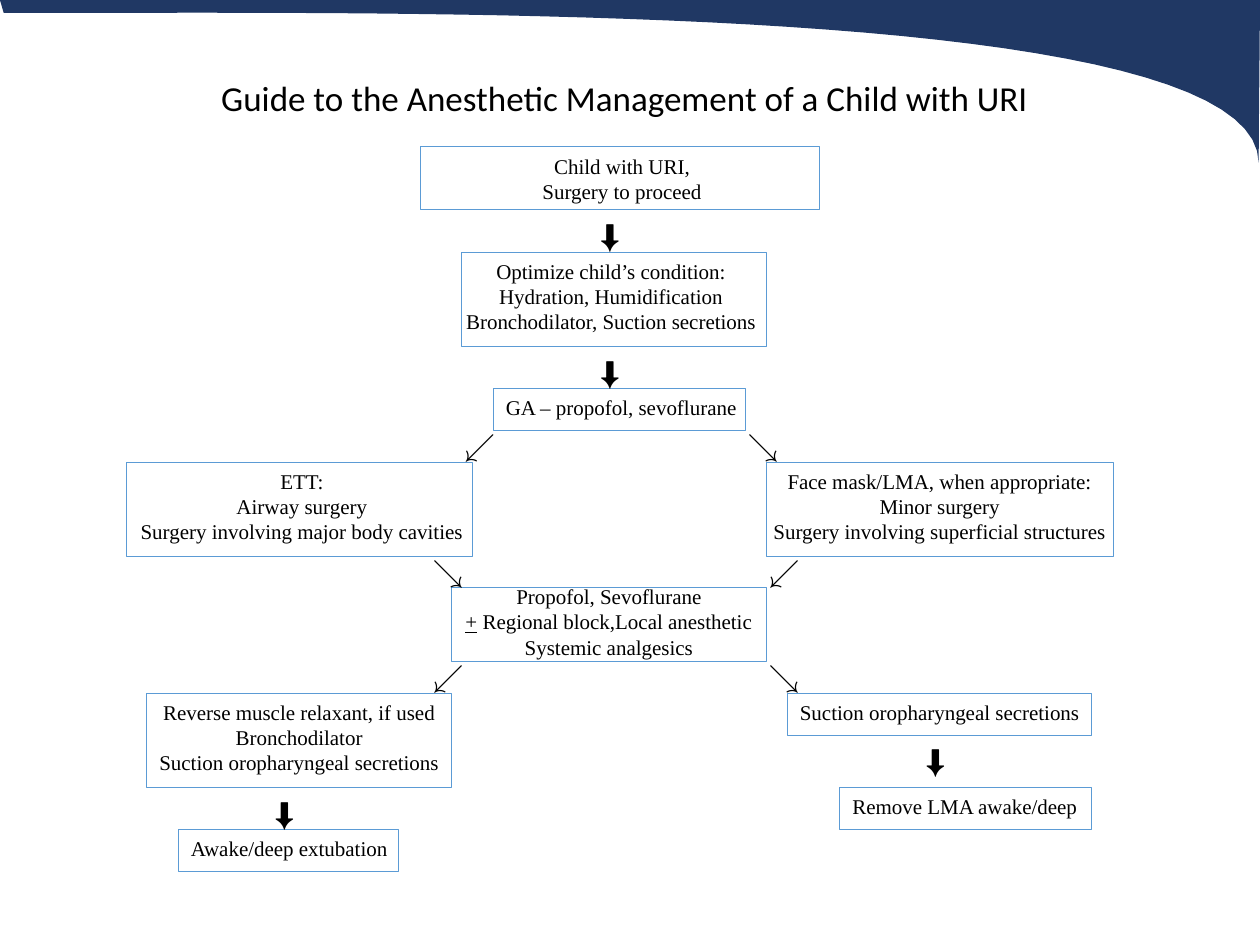
from dataclasses import dataclass
from pptx import Presentation
from pptx.dml.color import RGBColor
from pptx.enum.shapes import MSO_SHAPE
from pptx.enum.text import MSO_ANCHOR, MSO_AUTO_SIZE, PP_ALIGN
from pptx.util import Emu, Inches, Pt

RECT = MSO_SHAPE.RECTANGLE
MIDDLE = MSO_ANCHOR.MIDDLE
FIT, FIXED = MSO_AUTO_SIZE.SHAPE_TO_FIT_TEXT, MSO_AUTO_SIZE.NONE
LEFT, CENTER = PP_ALIGN.LEFT, PP_ALIGN.CENTER
WIDE, HIGH = Inches(10), Inches(7.5)
COLS, ROWS = 120, 90


@dataclass(frozen=True)
class Theme:
    """Colours, fonts and type sizes of the slide."""
    navy: RGBColor = RGBColor(0x20, 0x38, 0x64)
    blue: RGBColor = RGBColor(0x5B, 0x9B, 0xD5)
    ink: RGBColor = RGBColor(0, 0, 0)
    head: tuple = ("Calibri", 20)
    body: tuple = ("Times New Roman", 12)
    sign: tuple = ("Arial", 18)


THEME = Theme()

STEPS = [
    ((40, 14, 38, 6), (50, 14, 18.5), CENTER,
     ["Child with URI,", "Surgery to proceed"]),
    ((44, 24, 29, 9), (43, 24, 30.4), CENTER,
     ["Optimize child’s condition:", "Hydration, Humidification",
      "Bronchodilator, Suction secretions"]),
    ((47, 37, 24, 4), (47, 37, 25), LEFT, ["GA – propofol, sevoflurane"]),
    ((73, 44, 33, 9), (71, 44, 37), CENTER,
     ["Face mask/LMA, when appropriate:", "Minor surgery",
      "Surgery involving superficial structures"]),
    ((12, 44, 33, 9), (12, 44, 33.5), CENTER,
     ["ETT:", "Airway surgery", "Surgery involving major body cavities"]),
    ((43, 56, 30, 7), (43, 55, 30), CENTER,
     ["Propofol, Sevoflurane", "+| Regional block,Local anesthetic",
      "Systemic analgesics"]),
    ((75, 66, 29, 4), (75, 66, 30), LEFT, ["Suction oropharyngeal secretions"]),
    ((14, 66, 29, 9), (13, 66, 31), CENTER,
     ["Reverse muscle relaxant, if used", "Bronchodilator",
      "Suction oropharyngeal secretions"]),
    ((80, 75, 24, 4), (80, 75, 24), LEFT, ["Remove LMA awake/deep"]),
    ((17, 79, 21, 4), (17, 79, 22), LEFT, ["Awake/deep extubation"]),
]

SIGNS = {
    "⬇": [(56, 20), (56, 33), (87, 70), (25, 75)],
    "↙": [(43, 40), (72, 52), (40, 62)],
    "↘": [(70, 40), (40, 52), (72, 62)],
}


def place(x, y, w, h):
    """Turn grid columns and rows into slide lengths."""
    return [Emu(round(part)) for part in
            (WIDE * x / COLS, HIGH * y / ROWS, WIDE * w / COLS, HIGH * h / ROWS)]


def write(para, text, face, line=False):
    """Add one run in the given face."""
    run = para.add_run()
    run.text = text
    run.font.name, run.font.size = face[0], Pt(face[1])
    run.font.color.rgb = THEME.ink
    if line:
        run.font.underline = True


def label(slide, box, lines, face, align):
    """Add a text box; a bar in a line ends its underlined start."""
    frame = slide.shapes.add_textbox(*place(*box)).text_frame
    frame.word_wrap, frame.auto_size = False, FIT
    for i, line in enumerate(lines):
        para = frame.add_paragraph() if i else frame.paragraphs[0]
        para.alignment = align
        mark, bar, rest = line.rpartition("|")
        if bar:
            write(para, mark, face, True)
        write(para, rest, face)


def curve(a, b, c, d, count=40):
    """List points along a cubic curve."""
    steps = [i / count for i in range(1, count + 1)]
    return [tuple((1 - t) ** 3 * p + 3 * (1 - t) ** 2 * t * q
                  + 3 * (1 - t) * t ** 2 * r + t ** 3 * s
                  for p, q, r, s in zip(a, b, c, d)) for t in steps]


def banner(slide, box):
    """Draw the curved band across the top of the box."""
    left, top, wide, high = place(*box)
    tip, end = (0.999, 1), (0.003, 0.08)
    edge = [(1, 0)]
    edge += curve((1, 0), (1, 0.11), (0.999, 0.89), tip)
    edge += curve(tip, (0.998, 0), (0.336, 0.08), end)
    pen = slide.shapes.build_freeform(0, 0, scale=1.0)
    pen.add_line_segments([(round(x * wide), round(y * high)) for x, y in edge])
    band = pen.convert_to_shape(left, top)
    band.shadow.inherit = False
    band.fill.solid()
    band.fill.fore_color.rgb = THEME.navy
    band.line.fill.background()
    slide.shapes.element.insert(2, band.element)


def heading(slide, box, text):
    """Move and fill the title placeholder."""
    title = slide.shapes.title
    title.left, title.top, title.width, title.height = place(*box)
    frame = title.text_frame
    frame.word_wrap, frame.auto_size = True, FIXED
    frame.vertical_anchor = MIDDLE
    para = frame.paragraphs[0]
    para.alignment, para.line_spacing = CENTER, 0.9
    write(para, text, THEME.head)


def border(slide, box):
    """Outline one step."""
    rect = slide.shapes.add_shape(RECT, *place(*box))
    rect.shadow.inherit = False
    rect.fill.background()
    rect.line.color.rgb = THEME.blue
    rect.line.width = Pt(0.5)


def chart(slide):
    """Place the steps and the signs that lead between them."""
    for box, spot, align, lines in STEPS:
        tall = 2.4 * len(lines) + 1.2
        label(slide, (*spot, tall), lines, THEME.body, align)
        border(slide, box)
    for sign, spots in SIGNS.items():
        for spot in spots:
            label(slide, (*spot, 5.1, 4.8), [sign], THEME.sign, LEFT)


def main():
    """Build and save the slide."""
    deck = Presentation()
    deck.slide_width, deck.slide_height = WIDE, HIGH
    slide = deck.slides.add_slide(deck.slide_layouts[5])
    banner(slide, (0, 0, COLS, 15.5))
    heading(slide, (8, 2, 103, 15),
            "Guide to the Anesthetic Management of a Child with URI")
    chart(slide)
    deck.save("out.pptx")


if __name__ == "__main__":
    main()
